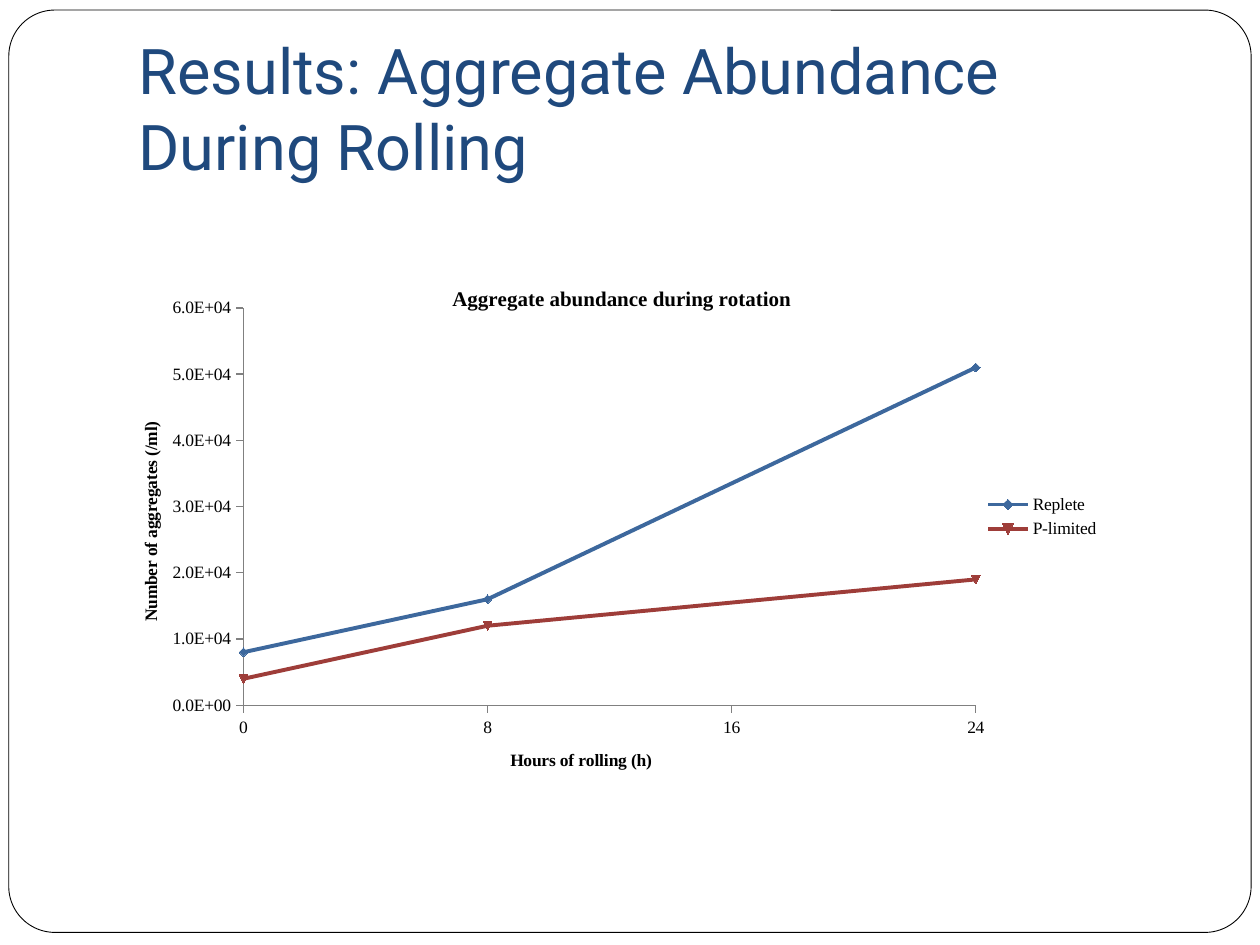
from lxml import etree
from pptx import Presentation
from pptx import util as u
from pptx.chart.data import XyChartData
from pptx.dml.color import RGBColor
from pptx.enum import chart as charts, shapes, text
from pptx.oxml.ns import qn

HOURS = [0, 8, 24]
SERIES = [
    ("Replete", [8000, 16000, 51000], "3D689D"),
    ("P-limited", [4000, 12000, 19000], "9E3D39"),
]


def color(value):
    return RGBColor.from_string(value)


class SlideBuilder:
    """Holds the style and the current slide."""

    title_font, chart_font = "Roboto", "Times New Roman"
    title_color, ink, axis_color = "1F497D", "000000", "808080"

    def __init__(self, slide):
        self.slide = slide

    def box(self, left, top, width, height):
        return [u.Inches(value) for value in (left, top, width, height)]

    def frame(self, *box):
        shape = self.slide.shapes.add_shape(
            shapes.MSO_SHAPE.ROUNDED_RECTANGLE, *self.box(*box))
        shape.adjustments[0] = 0.05
        shape.shadow.inherit = False
        shape.fill.solid()
        shape.fill.fore_color.rgb = color("FFFFFF")
        shape.line.color.rgb = color(self.ink)
        shape.line.width = u.Pt(0.5)
        # Send behind the title
        self.slide.shapes._spTree.insert(2, shape._element)

    def title(self, wording, *box):
        shape = self.slide.shapes.title
        shape.left, shape.top, shape.width, shape.height = self.box(*box)
        text_frame = shape.text_frame
        text_frame.text = wording
        text_frame.word_wrap = True
        text_frame.auto_size = text.MSO_AUTO_SIZE.NONE
        text_frame.vertical_anchor = text.MSO_ANCHOR.BOTTOM
        text_frame.margin_bottom = u.Inches(0.1)
        paragraph = text_frame.paragraphs[0]
        paragraph.alignment = text.PP_ALIGN.LEFT
        paragraph.line_spacing = 1.0
        self.format_font(paragraph.runs[0].font, self.title_font, 36,
                         self.title_color, False)

    def format_font(self, font, name, size, ink, bold):
        font.name, font.size, font.bold = name, u.Pt(size), bold
        font.color.rgb = color(ink)

    def place(self, element, **layout):
        """Give a chart part a manual layout, in fractions of the chart."""
        for old in element.findall(qn("c:layout")):
            element.remove(old)
        node = etree.Element(qn("c:layout"))
        manual = etree.SubElement(node, qn("c:manualLayout"))
        if "w" in layout:
            etree.SubElement(manual, qn("c:layoutTarget")).set("val", "inner")
        for side in ("x", "y"):
            etree.SubElement(manual, qn(f"c:{side}Mode")).set("val", "edge")
        for key, value in layout.items():
            etree.SubElement(manual, qn(f"c:{key}")).set("val", str(value))
        wording = element.find(qn("c:tx"))
        element.insert(0 if wording is None else 1, node)

    def chart_title(self, owner, wording, size, x, y):
        title = owner.chart_title if hasattr(owner, "chart_title") else owner.axis_title
        title.text_frame.text = wording
        run = title.text_frame.paragraphs[0].runs[0]
        self.format_font(run.font, self.chart_font, size, self.ink, True)
        self.place(title._element, x=x, y=y)
        return title

    def axis(self, axis, maximum, step, number_format):
        axis.minimum_scale, axis.maximum_scale = 0, maximum
        axis.major_unit = step
        axis.has_major_gridlines = False
        axis.major_tick_mark = charts.XL_TICK_MARK.OUTSIDE
        axis.minor_tick_mark = charts.XL_TICK_MARK.NONE
        axis.tick_labels.number_format = number_format
        axis.tick_labels.number_format_is_linked = False
        axis.format.line.color.rgb = color(self.axis_color)
        axis.format.line.width = u.Pt(0.75)

    def scatter(self, *box):
        data = XyChartData()
        for name, values, _ in SERIES:
            series = data.add_series(name)
            for hour, value in zip(HOURS, values):
                series.add_data_point(hour, value)
        chart = self.slide.shapes.add_chart(
            charts.XL_CHART_TYPE.XY_SCATTER_LINES, *self.box(*box), data).chart
        self.format_font(chart.font, self.chart_font, 10, self.ink, False)
        plot = chart.plots[0]
        plot.vary_by_categories = False
        for series, (_, _, ink) in zip(plot.series, SERIES):
            series.smooth = False
            series.format.line.color.rgb = color(ink)
            series.format.line.width = u.Pt(2.25)
        chart.has_legend = True
        chart.legend.position = charts.XL_LEGEND_POSITION.RIGHT
        chart.legend.include_in_layout = False

        # Axes and titles
        self.axis(chart.category_axis, 24, 8, "0")
        self.axis(chart.value_axis, 60000, 10000, "0.0E+00")
        self.chart_title(chart, "Aggregate abundance during rotation", 12, 0.32, 0.04)
        self.chart_title(chart.category_axis, "Hours of rolling (h)", 10, 0.38, 0.95)
        vertical = self.chart_title(
            chart.value_axis, "Number of aggregates (/ml)", 10, 0, 0.31)
        vertical.text_frame._txBody.bodyPr.set("rot", "-5400000")
        vertical.text_frame._txBody.bodyPr.set("vert", "horz")
        plot_area = chart._chartSpace.chart.plotArea
        self.place(plot_area, x=0.11, y=0.09, w=0.75, h=0.78)


def main():
    presentation = Presentation()
    presentation.slide_width, presentation.slide_height = u.Inches(10), u.Inches(7.5)
    slide = presentation.slides.add_slide(presentation.slide_layouts[5])
    builder = SlideBuilder(slide)
    builder.frame(0.07, 0.08, 9.86, 7.32)
    builder.title("Results: Aggregate Abundance During Rolling", 1, 0.3, 8.5, 1.25)
    builder.scatter(1.08, 2.08, 7.75, 4.08)
    presentation.save("out.pptx")


if __name__ == "__main__":
    main()
